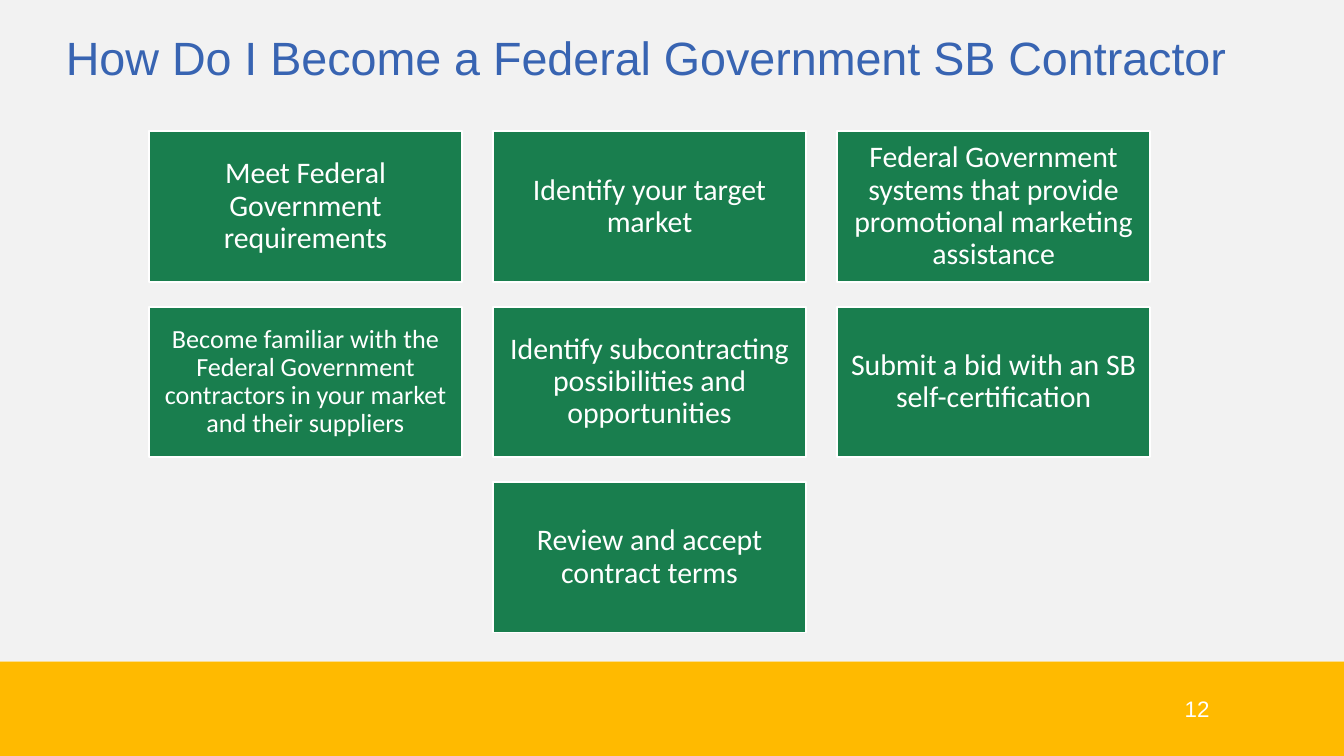
from pptx import Presentation
from pptx.dml.color import RGBColor
from pptx.enum import shapes, text
from pptx.util import Pt

WHITE, GREEN, YELLOW, GREY, BLUE = "FFFFFF", "197E4E", "FFBA00", "F2F2F2", "3864B2"
SLIDE_W, SLIDE_H, FOOTER_TOP = 720, 405, 354.3
STEP_W, STEP_H = 167.6, 80.6
GRID_LEFT, GRID_TOP, PITCH_X, PITCH_Y = 79.9, 70.3, 184.3, 94

# (column, row, font size, wording)
STEPS = [
    (0, 0, 16, "Meet Federal Government requirements"),
    (1, 0, 16, "Identify your target market"),
    (2, 0, 16, "Federal Government systems that provide promotional marketing assistance"),
    (0, 1, 14, "Become familiar with the Federal Government contractors "
               "in your market and their suppliers"),
    (1, 1, 16, "Identify subcontracting possibilities and opportunities"),
    (2, 1, 16, "Submit a bid with an SB self-certification"),
    (1, 2, 16, "Review and accept contract terms"),
]


def rgb(color):
    return RGBColor.from_string(color)


def add_rect(s, x, y, w, h, fill, line=None):
    sp = s.shapes.add_shape(shapes.MSO_SHAPE.RECTANGLE, Pt(x), Pt(y), Pt(w), Pt(h))
    sp.shadow.inherit = False
    sp.fill.solid()
    sp.fill.fore_color.rgb = rgb(fill)
    if line:
        sp.line.color.rgb = rgb(line)
        sp.line.width = Pt(1)
    else:
        sp.line.fill.background()
    return sp


def set_text(sp, wording, size, font, color, align, inset=0):
    """Fill a shape with one vertically centred paragraph."""
    tf = sp.text_frame
    tf.word_wrap = True
    tf.auto_size = text.MSO_AUTO_SIZE.NONE
    tf.vertical_anchor = text.MSO_ANCHOR.MIDDLE
    tf.margin_left = tf.margin_right = tf.margin_top = tf.margin_bottom = Pt(inset)
    p = tf.paragraphs[0]
    p.text = wording
    p.alignment = align
    p.font.size = Pt(size)
    p.font.name = font
    p.font.color.rgb = rgb(color)
    return p


def add_title(s, wording):
    title = s.shapes.title
    title.left, title.top, title.width, title.height = Pt(35.3), Pt(13), Pt(631), Pt(34.6)
    set_text(title, wording, 25, "Arial", BLUE, text.PP_ALIGN.LEFT)
    s.shapes._spTree.append(title._element)  # bring in front of the bands


def add_page_number(s, number):
    box = s.shapes.add_textbox(Pt(504), Pt(367.2), Pt(144), Pt(25.2))
    set_text(box, number, 12, "Arial", WHITE, text.PP_ALIGN.RIGHT)


def add_step(s, col, row, size, wording):
    sp = add_rect(s, GRID_LEFT + col * PITCH_X, GRID_TOP + row * PITCH_Y,
                  STEP_W, STEP_H, GREEN, WHITE)
    p = set_text(sp, wording, size, "Calibri", WHITE, text.PP_ALIGN.CENTER, inset=4.8)
    p.line_spacing = 0.9


def main():
    prs = Presentation()
    prs.slide_width, prs.slide_height = Pt(SLIDE_W), Pt(SLIDE_H)
    s = prs.slides.add_slide(prs.slide_layouts[5])
    add_rect(s, 0, FOOTER_TOP, SLIDE_W, SLIDE_H - FOOTER_TOP, YELLOW)
    add_rect(s, 0, 0, SLIDE_W, FOOTER_TOP, GREY)
    add_title(s, "How Do I Become a Federal Government SB Contractor")
    add_page_number(s, "12")
    for step in STEPS:
        add_step(s, *step)
    prs.save("out.pptx")


if __name__ == "__main__":
    main()
